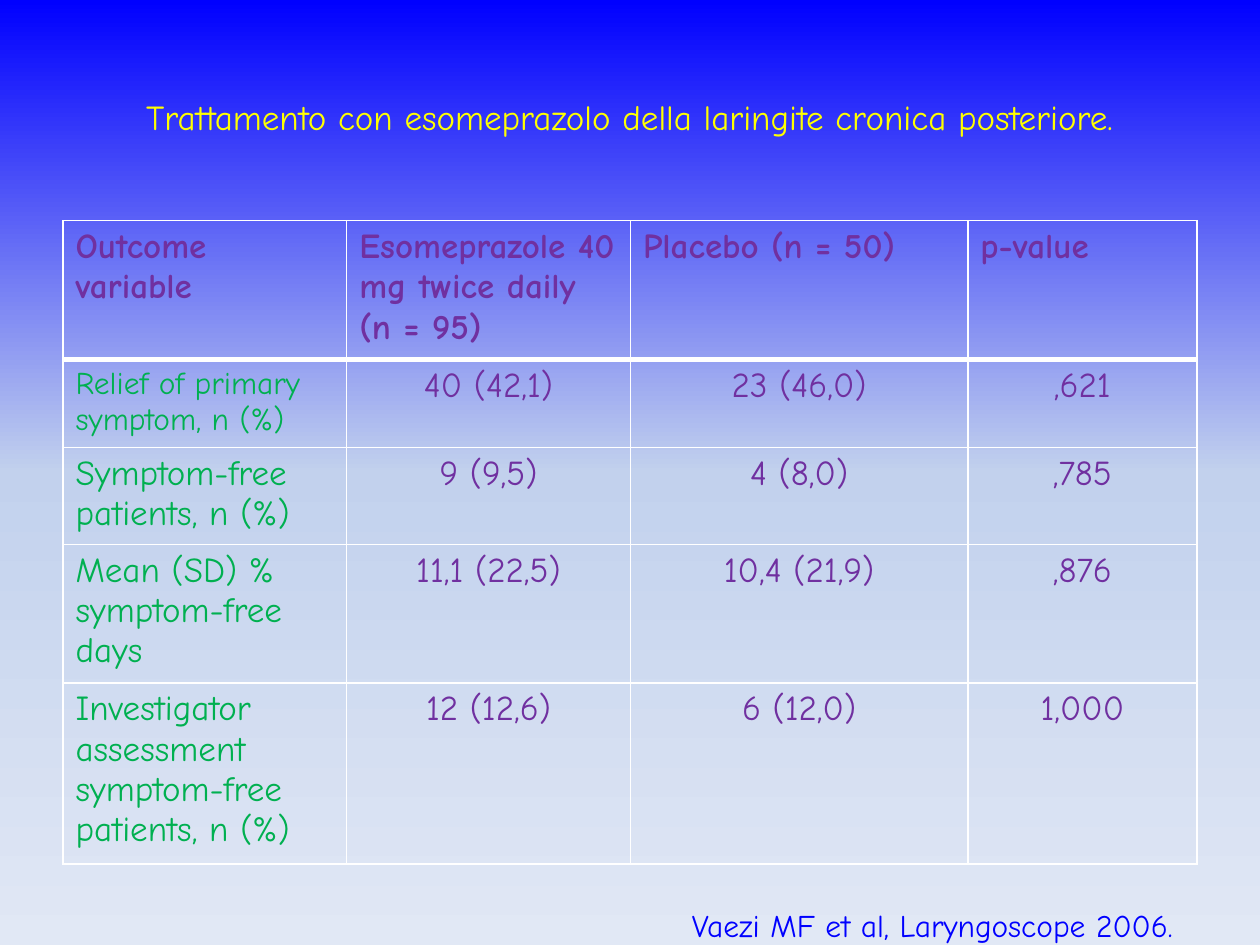
from copy import deepcopy
from dataclasses import dataclass

from lxml import etree
from pptx import Presentation
from pptx.dml.color import RGBColor
from pptx.enum.text import MSO_ANCHOR, PP_ALIGN
from pptx.oxml.ns import qn
from pptx.util import Cm, Pt

LEFT, CENTER = PP_ALIGN.LEFT, PP_ALIGN.CENTER
TOP, MIDDLE = MSO_ANCHOR.TOP, MSO_ANCHOR.MIDDLE


@dataclass(frozen=True)
class Theme:
    font: str = "Comic Neue"
    title: str = "FFFF00"
    value: str = "7030A0"
    outcome: str = "00B050"
    citation: str = "0000FF"
    border: str = "FFFFFF"
    gradient: tuple = ((0, "0000FF"), (0.5, "C2D1ED"), (1, "E1E8F5"))
    normal: int = 20
    small: int = 18
    thin: int = 1
    thick: int = 3


class SlideBuilder:
    def __init__(self, slide, theme):
        self.slide = slide
        self.theme = theme

    def background(self):
        fill = self.slide.background.fill
        fill.gradient()
        fill.gradient_angle = 270
        # The default gradient has two stops; add the middle one
        first = fill.gradient_stops[0]._gs
        first.addnext(deepcopy(first))
        for stop, (position, color) in zip(fill.gradient_stops, self.theme.gradient):
            stop.position = position
            stop.color.rgb = RGBColor.from_string(color)

    def add_words(self, frame, text, color, size, align=LEFT, bold=False):
        paragraph = frame.paragraphs[0]
        paragraph.alignment = align
        run = paragraph.add_run()
        run.text = text
        formats = {"name": self.theme.font, "size": Pt(size), "bold": bold}
        for attribute, value in formats.items():
            setattr(run.font, attribute, value)
        run.font.color.rgb = RGBColor.from_string(color)

    def text(self, box, text, color, size, align=LEFT, anchor=TOP, wrap=True):
        frame = self.slide.shapes.add_textbox(*map(Cm, box)).text_frame
        frame.word_wrap = wrap
        frame.vertical_anchor = anchor
        self.add_words(frame, text, color, size, align)

    def borders(self, cell, widths):
        properties = cell._tc.get_or_add_tcPr()
        for side, width in widths.items():
            line = etree.SubElement(properties, qn(f"a:ln{side}"), w=str(Pt(width)))
            solid = etree.SubElement(line, qn("a:solidFill"))
            etree.SubElement(solid, qn("a:srgbClr"), val=self.theme.border)

    def table(self, left, top, widths, heights, rows):
        theme = self.theme
        table = self.slide.shapes.add_table(
            len(rows), len(widths), Cm(left), Cm(top),
            Cm(sum(widths)), Cm(sum(heights))).table
        table.first_row = table.horz_banding = False
        for column, width in zip(table.columns, widths):
            column.width = Cm(width)
        for row, height in zip(table.rows, heights):
            row.height = Cm(height)

        for r, row in enumerate(rows):
            for c, text in enumerate(row):
                cell = table.cell(r, c)
                header, outcome = r == 0, c == 0 and r > 0
                self.add_words(
                    cell.text_frame, text,
                    color=theme.outcome if outcome else theme.value,
                    size=theme.small if outcome and r == 1 else theme.normal,
                    align=LEFT if header or outcome else CENTER,
                    bold=header)
                self.borders(cell, {
                    "L": theme.thin, "R": theme.thin,
                    "T": theme.thick if r == 1 else theme.thin,
                    "B": theme.thick if header else theme.thin})
                cell.fill.background()


OUTCOMES = [
    ("Outcome variable", "Esomeprazole 40 mg twice daily (n = 95)",
     "Placebo (n = 50)", "p-value"),
    ("Relief of primary symptom, n (%)", "40 (42,1)", "23 (46,0)", ",621"),
    ("Symptom-free patients, n (%)", "9 (9,5)", "4 (8,0)", ",785"),
    ("Mean (SD) % symptom-free days", "11,1 (22,5)", "10,4 (21,9)", ",876"),
    ("Investigator assessment symptom-free patients, n (%)",
     "12 (12,6)", "6 (12,0)", "1,000"),
]


def main():
    deck = Presentation()
    deck.slide_width, deck.slide_height = Cm(25.4), Cm(19.05)
    theme = Theme()
    builder = SlideBuilder(deck.slides.add_slide(deck.slide_layouts[6]), theme)
    builder.background()

    # Title
    builder.text((1.27, 0.76, 22.86, 3.18),
                 "Trattamento con esomeprazolo della laringite cronica posteriore.",
                 theme.title, theme.normal, CENTER, MIDDLE)

    # Trial outcomes
    builder.table(1.27, 4.45, widths=(5.72, 5.72, 6.8, 4.62),
                  heights=(2.69, 1.72, 1.88, 2.69, 3.5), rows=OUTCOMES)

    # Citation
    builder.text((13.7, 18.13, 11.12, 1.02), "Vaezi MF et al, Laryngoscope 2006.",
                 theme.citation, theme.small, wrap=False)

    deck.save("out.pptx")


if __name__ == "__main__":
    main()
